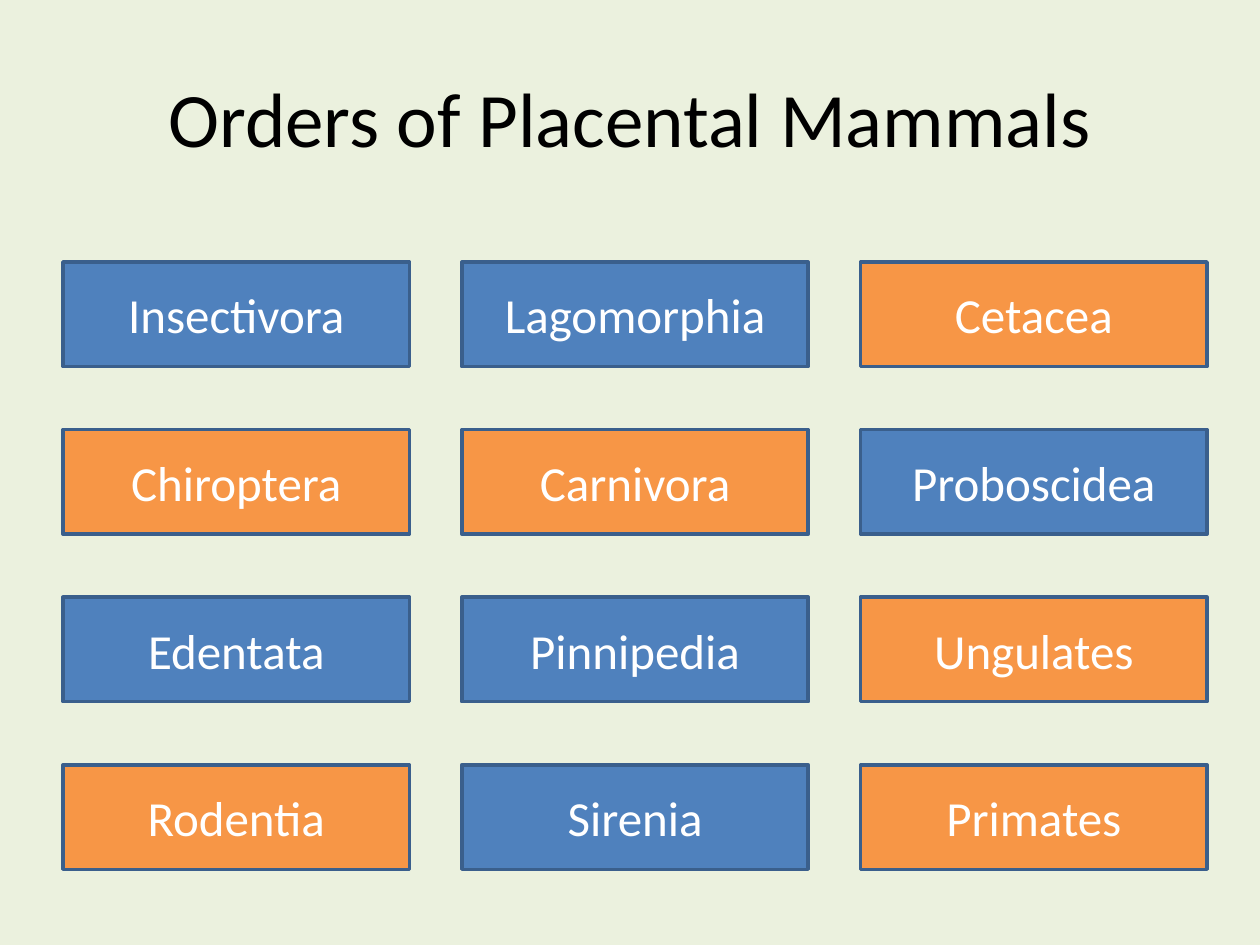
import pptx
import pptx.util
import pptx.dml.color
import pptx.enum.shapes
import pptx.enum.text

TITLE = "Orders of Placental Mammals"
# Rows of (order, fill name in THEME)
ORDERS = [
    [("Insectivora", "blue"), ("Lagomorphia", "blue"), ("Cetacea", "orange")],
    [("Chiroptera", "orange"), ("Carnivora", "orange"), ("Proboscidea", "blue")],
    [("Edentata", "blue"), ("Pinnipedia", "blue"), ("Ungulates", "orange")],
    [("Rodentia", "orange"), ("Sirenia", "blue"), ("Primates", "orange")],
]
THEME = {
    "background": "EBF1DE", "blue": "4F81BD", "orange": "F79646",
    "outline": "3A5F8C", "title": "000000", "label": "FFFFFF",
    "font": "Calibri", "title_size": 44, "label_size": 28, "line_width": 2,
}
SLIDE_W, SLIDE_H = 10, 7.5
GRID_LEFT, GRID_TOP = 0.5, 2.08
BOX_W, BOX_H = 2.75, 0.83
GAP_X, GAP_Y = 0.415, 0.5

Inches = pptx.util.Inches


def color(name):
    return pptx.dml.color.RGBColor.from_string(THEME[name])


def write(shape, text, role):
    tf = shape.text_frame
    tf.word_wrap = True
    tf.vertical_anchor = pptx.enum.text.MSO_ANCHOR.MIDDLE
    p = tf.paragraphs[0]
    p.alignment = pptx.enum.text.PP_ALIGN.CENTER
    r = p.add_run()
    r.text = text
    r.font.name = THEME["font"]
    r.font.size = pptx.util.Pt(THEME[role + "_size"])
    r.font.color.rgb = color(role)


def add_order(s, name, fill, col, row):
    box = s.shapes.add_shape(
        pptx.enum.shapes.MSO_SHAPE.RECTANGLE,
        Inches(GRID_LEFT + col * (BOX_W + GAP_X)),
        Inches(GRID_TOP + row * (BOX_H + GAP_Y)),
        Inches(BOX_W), Inches(BOX_H))
    box.shadow.inherit = False
    box.fill.solid()
    box.fill.fore_color.rgb = color(fill)
    box.line.color.rgb = color("outline")
    box.line.width = pptx.util.Pt(THEME["line_width"])
    write(box, name, "label")


def main():
    prs = pptx.Presentation()
    prs.slide_width, prs.slide_height = Inches(SLIDE_W), Inches(SLIDE_H)
    s = prs.slides.add_slide(prs.slide_layouts[5])
    s.background.fill.solid()
    s.background.fill.fore_color.rgb = color("background")

    title = s.shapes.title
    title.left, title.top = Inches(0.05 * SLIDE_W), Inches(0.04 * SLIDE_H)
    title.width, title.height = Inches(0.9 * SLIDE_W), Inches(SLIDE_H / 6)
    write(title, TITLE, "title")

    for row, orders in enumerate(ORDERS):
        for col, (name, fill) in enumerate(orders):
            add_order(s, name, fill, col, row)
    prs.save("out.pptx")


if __name__ == "__main__":
    main()
